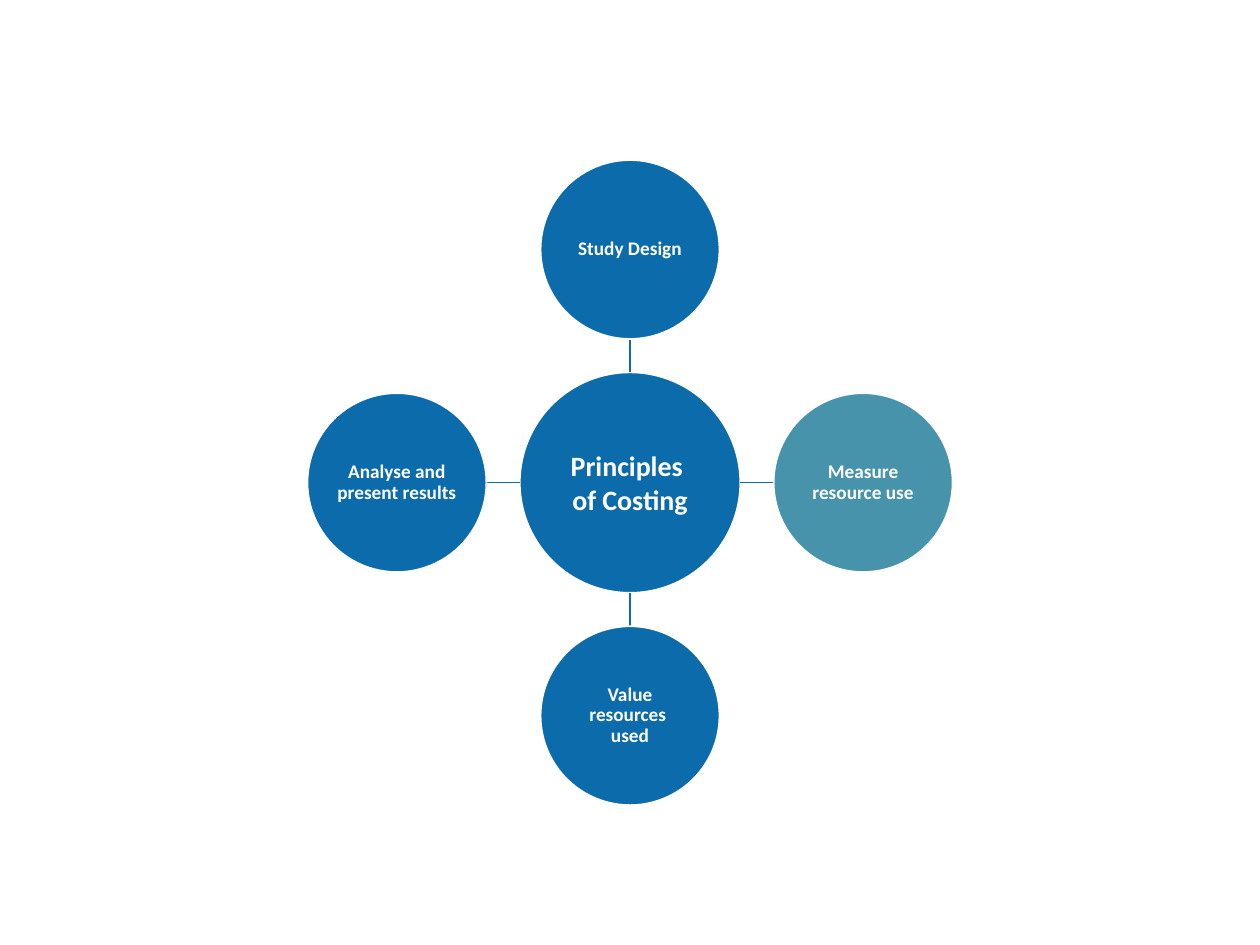
import pptx
import pptx.dml.color
import pptx.enum.shapes
import pptx.enum.text
import pptx.oxml.ns
import pptx.util
from lxml import etree
from pptx.util import Inches

BLUE, TEAL, WHITE = "0C6BAB", "4693AB", "FFFFFF"
FONT = "Calibri"

HUB_TEXT = "Principles \vof Costing"
# text, fill, direction from the hub (x, y)
STEPS = [
    ("Study Design", BLUE, (0, -1)),
    ("Measure resource use", TEAL, (1, 0)),
    ("Value resources \vused", BLUE, (0, 1)),
    ("Analyse and present results", BLUE, (-1, 0)),
]

CENTER_X, CENTER_Y = 5, 3.83
HUB_SIZE, STEP_SIZE = 1.75, 1.42
ORBIT = 1.85


def color(value):
    return pptx.dml.color.RGBColor.from_string(value)


def add_circle(slide, text, fill, x, y, diameter, size, spacing):
    """Add a labelled circle centred on x, y."""
    circle = slide.shapes.add_shape(
        pptx.enum.shapes.MSO_SHAPE.OVAL,
        Inches(x - diameter / 2), Inches(y - diameter / 2),
        Inches(diameter), Inches(diameter))
    circle.shadow.inherit = False
    circle.fill.solid()
    circle.fill.fore_color.rgb = color(fill)
    circle.line.color.rgb = color(WHITE)
    circle.line.width = pptx.util.Pt(1)

    frame = circle.text_frame
    frame.word_wrap = True
    frame.vertical_anchor = pptx.enum.text.MSO_ANCHOR.MIDDLE
    frame.margin_left = frame.margin_right = Inches(0.01)
    frame.margin_top = frame.margin_bottom = Inches(0.01)
    frame.text = text
    para = frame.paragraphs[0]
    para.alignment = pptx.enum.text.PP_ALIGN.CENTER
    para.line_spacing = spacing
    for span in para.runs:
        span.font.name = FONT
        span.font.size = pptx.util.Pt(size)
        span.font.bold = True
        span.font.color.rgb = color(WHITE)


def add_spoke(slide, dx, dy):
    """Join the hub's edge to the edge of the step in direction dx, dy."""
    start, end = HUB_SIZE / 2, ORBIT - STEP_SIZE / 2
    spoke = slide.shapes.add_connector(
        pptx.enum.shapes.MSO_CONNECTOR.STRAIGHT,
        Inches(CENTER_X + dx * start), Inches(CENTER_Y + dy * start),
        Inches(CENTER_X + dx * end), Inches(CENTER_Y + dy * end))
    spoke.line.color.rgb = color(BLUE)
    spoke.line.width = pptx.util.Pt(1)
    etree.SubElement(spoke._element.spPr, pptx.oxml.ns.qn("a:effectLst"))


def main():
    deck = pptx.Presentation()
    deck.slide_width, deck.slide_height = Inches(10), Inches(7.5)
    slide = deck.slides.add_slide(deck.slide_layouts[6])

    add_circle(slide, HUB_TEXT, BLUE, CENTER_X, CENTER_Y, HUB_SIZE, 16, 1.0)
    for text, fill, (dx, dy) in STEPS:
        add_spoke(slide, dx, dy)
        add_circle(slide, text, fill, CENTER_X + dx * ORBIT,
                   CENTER_Y + dy * ORBIT, STEP_SIZE, 11, 0.9)

    deck.save("out.pptx")


if __name__ == "__main__":
    main()
